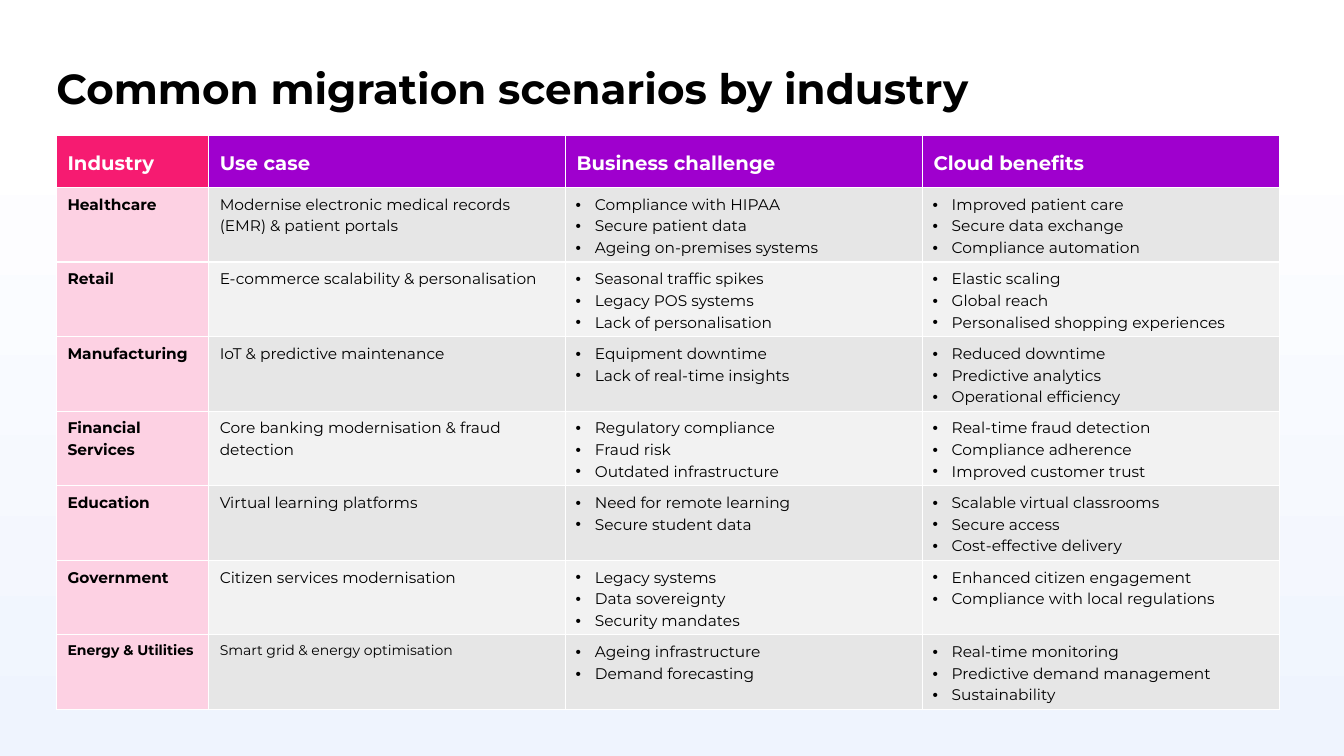
from lxml import etree
from pptx import Presentation
from pptx.dml.color import RGBColor
from pptx.enum.shapes import MSO_SHAPE as Preset
from pptx.enum.text import MSO_ANCHOR as Anchor
from pptx.oxml.ns import qn
from pptx.util import Inches, Pt

# Content
TITLE = "Common migration scenarios by industry"
HEADINGS = ("Industry", "Use case", "Business challenge", "Cloud benefits")
SCENARIOS = [
    ("Healthcare", "Modernise electronic medical records (EMR) & patient portals",
     ["Compliance with HIPAA", "Secure patient data", "Ageing on-premises systems"],
     ["Improved patient care", "Secure data exchange", "Compliance automation"]),
    ("Retail", "E-commerce scalability & personalisation",
     ["Seasonal traffic spikes", "Legacy POS systems", "Lack of personalisation"],
     ["Elastic scaling", "Global reach", "Personalised shopping experiences"]),
    ("Manufacturing", "IoT & predictive maintenance",
     ["Equipment downtime", "Lack of real-time insights"],
     ["Reduced downtime", "Predictive analytics", "Operational efficiency"]),
    ("Financial Services", "Core banking modernisation & fraud detection",
     ["Regulatory compliance", "Fraud risk", "Outdated infrastructure"],
     ["Real-time fraud detection", "Compliance adherence", "Improved customer trust"]),
    ("Education", "Virtual learning platforms",
     ["Need for remote learning", "Secure student data"],
     ["Scalable virtual classrooms", "Secure access", "Cost-effective delivery"]),
    ("Government", "Citizen services modernisation",
     ["Legacy systems", "Data sovereignty", "Security mandates"],
     ["Enhanced citizen engagement", "Compliance with local regulations"]),
    ("Energy & Utilities", "Smart grid & energy optimisation",
     ["Ageing infrastructure", "Demand forecasting"],
     ["Real-time monitoring", "Predictive demand management", "Sustainability"]),
]

# Style
FONT = "Montserrat"
BLACK, WHITE = RGBColor(0, 0, 0), RGBColor(255, 255, 255)
PALE_BLUE = RGBColor(0xEF, 0xF4, 0xFE)
PINK, PALE_PINK = RGBColor(0xF6, 0x1B, 0x71), RGBColor(0xFD, 0xD1, 0xE3)
PURPLE = RGBColor(0x9F, 0x00, 0xCE)
BANDS = (RGBColor(0xE6, 0xE6, 0xE6), RGBColor(0xF2, 0xF2, 0xF2))

# Grid, in inches
WIDTH, HEIGHT = 13.33, 7.5
MARGIN = 0.56
TABLE_TOP = 1.34
COLUMNS = (1.51, 3.54, 3.54, 3.54)
ROWS = (0.52,) + (0.74,) * len(SCENARIOS)
TEXT_INDENT, BULLET_INDENT = 0.01, 0.19


def style_font(paragraph, size, color, bold):
    for run in paragraph.runs:
        run.font.name = FONT
        run.font.size = Pt(size)
        run.font.bold = bold
        run.font.color.rgb = color


def set_indent(paragraph, bulleted):
    properties = paragraph._p.get_or_add_pPr()
    left = BULLET_INDENT if bulleted else TEXT_INDENT
    properties.set("marL", str(Inches(left)))
    properties.set("indent", str(-Inches(left) if bulleted else 0))
    if bulleted:
        etree.SubElement(properties, qn("a:buFont"), typeface="Arial")
        etree.SubElement(properties, qn("a:buChar"), char="•")


def add_borders(cell):
    properties = cell._tc.get_or_add_tcPr()
    for side in ("lnL", "lnR", "lnT", "lnB"):
        line = etree.SubElement(properties, qn(f"a:{side}"), w=str(Pt(1)))
        fill = etree.SubElement(line, qn("a:solidFill"))
        etree.SubElement(fill, qn("a:srgbClr"), val=str(WHITE))


def fill_cell(cell, content, fill, size, color, bold):
    add_borders(cell)
    cell.fill.solid()
    cell.fill.fore_color.rgb = fill
    bulleted = isinstance(content, list)
    cell.text_frame.text = "\n".join(content) if bulleted else content
    for paragraph in cell.text_frame.paragraphs:
        set_indent(paragraph, bulleted)
        paragraph.line_spacing = 1.15
        style_font(paragraph, size, color, bold)


presentation = Presentation()
presentation.slide_width, presentation.slide_height = Inches(WIDTH), Inches(HEIGHT)
slide = presentation.slides.add_slide(presentation.slide_layouts[6])

# Background fading to pale blue
fade_top = 1.14
backdrop = slide.shapes.add_shape(
    Preset.RECTANGLE, 0, Inches(fade_top), Inches(WIDTH), Inches(HEIGHT - fade_top))
backdrop.shadow.inherit = False
backdrop.line.fill.background()
backdrop.fill.gradient()
backdrop.fill.gradient_angle = 270
for stop, color in zip(backdrop.fill.gradient_stops, (WHITE, PALE_BLUE)):
    stop.color.rgb = color

# Title, with one line of room below it
title = slide.shapes.add_textbox(Inches(MARGIN), Inches(MARGIN), Inches(11.47), Inches(0.98))
frame = title.text_frame
frame.word_wrap = True
frame.vertical_anchor = Anchor.BOTTOM
frame.margin_left = frame.margin_right = frame.margin_top = 0
frame.margin_bottom = Pt(30)
frame.text = TITLE
frame.paragraphs[0].line_spacing = Pt(30)
style_font(frame.paragraphs[0], 30, BLACK, True)

# Table
table = slide.shapes.add_table(
    len(ROWS), len(COLUMNS), Inches(MARGIN), Inches(TABLE_TOP),
    Inches(sum(COLUMNS)), Inches(sum(ROWS))).table
for column, width in zip(table.columns, COLUMNS):
    column.width = Inches(width)
for row, height in zip(table.rows, ROWS):
    row.height = Inches(height)

for index, heading in enumerate(HEADINGS):
    cell = table.cell(0, index)
    cell.vertical_anchor = Anchor.MIDDLE
    fill_cell(cell, heading, PURPLE if index else PINK, 14, WHITE, True)

for number, scenario in enumerate(SCENARIOS):
    last = number == len(SCENARIOS) - 1
    for index, content in enumerate(scenario):
        fill = BANDS[number % 2] if index else PALE_PINK
        size = 10 if last and index < 2 else 11
        fill_cell(table.cell(number + 1, index), content, fill, size, BLACK, index == 0)

presentation.save("out.pptx")
